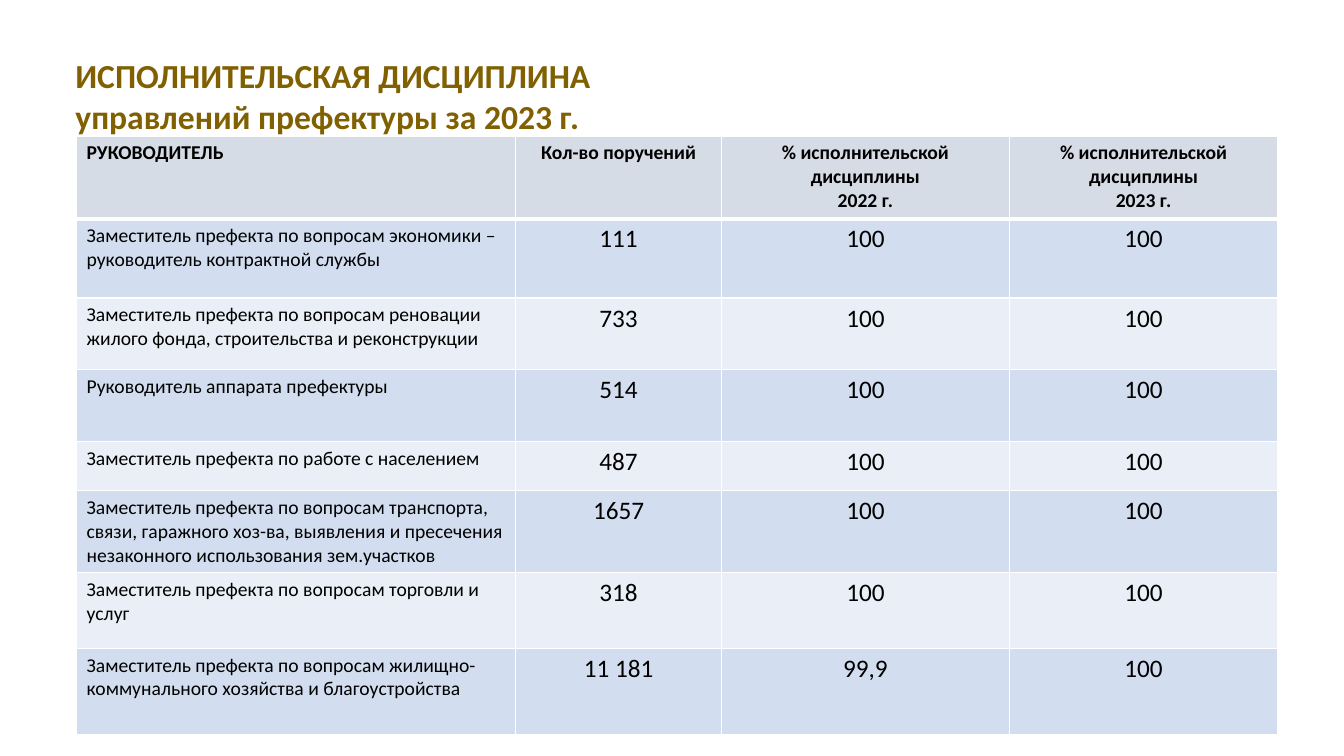
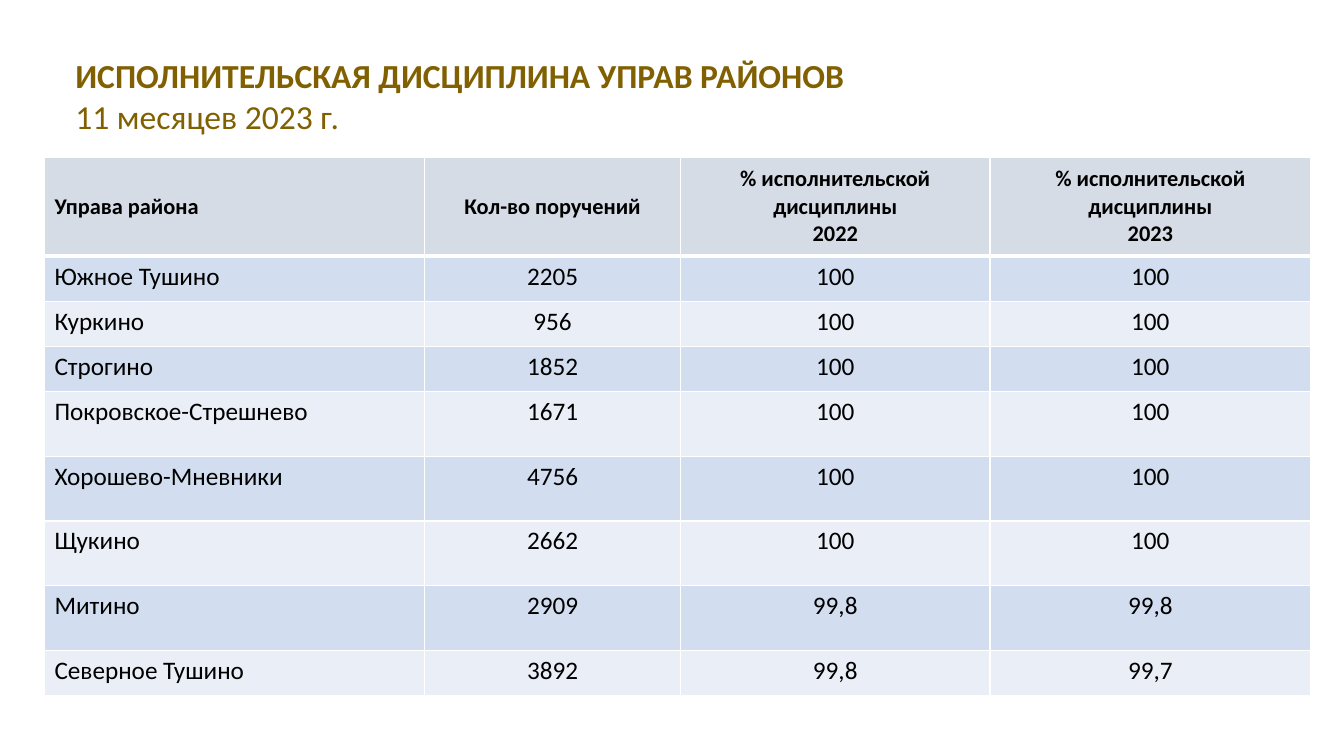
from lxml.etree import SubElement
from pptx import Presentation
from pptx.dml.color import RGBColor
from pptx.enum.text import MSO_ANCHOR, PP_ALIGN
from pptx.oxml.ns import qn
from pptx.util import Cm, Pt

GOLD = RGBColor(0x80, 0x60, 0x00)
BLACK = RGBColor(0x00, 0x00, 0x00)
WHITE = RGBColor(0xFF, 0xFF, 0xFF)
HEADER = RGBColor(0xD6, 0xDC, 0xE5)
BANDS = (RGBColor(0xD2, 0xDE, 0xEF), RGBColor(0xEA, 0xEF, 0xF7))
FONT = "Calibri"


class Deck:
    """Shared style and the current slide."""

    def __init__(self):
        self.prs = Presentation()
        self.prs.slide_width, self.prs.slide_height = Cm(33.87), Cm(19.05)

    def slide(self):
        self.s = self.prs.slides.add_slide(self.prs.slide_layouts[6])

    def run(self, p, text, size, color=BLACK, bold=False):
        r = p.add_run()
        r.text = text
        r.font.name, r.font.size, r.font.bold = FONT, Pt(size), bold
        r.font.color.rgb = color

    def title(self, heading, subtitle, bold_subtitle=False):
        box = self.s.shapes.add_textbox(Cm(1.65), Cm(1.27), Cm(26.29), Cm(2.16))
        tf = box.text_frame
        tf.word_wrap = True
        self.run(tf.paragraphs[0], heading, 24, GOLD, True)
        self.run(tf.add_paragraph(), subtitle, 24, GOLD, bold_subtitle)

    def borders(self, cell, top, bottom):
        tc_pr = cell._tc.get_or_add_tcPr()
        for tag, width in (("lnL", 1), ("lnR", 1), ("lnT", top), ("lnB", bottom)):
            ln = SubElement(tc_pr, qn(f"a:{tag}"), w=str(Pt(width)))
            fill = SubElement(ln, qn("a:solidFill"))
            SubElement(fill, qn("a:srgbClr"), val=str(WHITE))

    def cell(self, cell, text, size, fill, bold, centered):
        for i, line in enumerate(text.split("\n")):
            tf = cell.text_frame
            p = tf.add_paragraph() if i else tf.paragraphs[0]
            p.alignment = PP_ALIGN.CENTER if centered else PP_ALIGN.LEFT
            self.run(p, line, size, bold=bold)
        cell.fill.solid()
        cell.fill.fore_color.rgb = fill

    def table(self, left, top, widths, heights, rows, head_size, name_size,
              head_anchor=MSO_ANCHOR.TOP):
        frame = self.s.shapes.add_table(len(rows), len(widths), Cm(left), Cm(top),
                                        Cm(sum(widths)), Cm(sum(heights)))
        tbl = frame.table
        for col, width in zip(tbl.columns, widths):
            col.width = Cm(width)
        for i, (row, height, values) in enumerate(zip(tbl.rows, heights, rows)):
            row.height = Cm(height)
            head = i == 0
            fill = HEADER if head else BANDS[(i - 1) % 2]
            for j, text in enumerate(values):
                c = tbl.cell(i, j)
                size = head_size if head else 18 if j else name_size
                self.borders(c, 3 if i == 1 else 1, 3 if head else 1)
                self.cell(c, text, size, fill, head, j > 0)
                c.vertical_anchor = head_anchor if head else MSO_ANCHOR.TOP


def main():
    deck = Deck()
    percent = "% исполнительской дисциплины\n"

    # Prefecture departments
    deck.slide()
    deck.title("ИСПОЛНИТЕЛЬСКАЯ ДИСЦИПЛИНА", "управлений префектуры за 2023 г.", True)
    deputy = "Заместитель префекта по "
    departments = [
        ("РУКОВОДИТЕЛЬ", "Кол-во поручений", percent + "2022 г.", percent + "2023 г."),
        (deputy + "вопросам экономики – руководитель контрактной службы",
         "111", "100", "100"),
        (deputy + "вопросам реновации жилого фонда, строительства и реконструкции",
         "733", "100", "100"),
        ("Руководитель аппарата префектуры", "514", "100", "100"),
        (deputy + "работе с населением", "487", "100", "100"),
        (deputy + "вопросам транспорта, связи, гаражного хоз-ва, выявления "
         "и пресечения незаконного использования зем.участков",
         "1657", "100", "100"),
        (deputy + "вопросам торговли и услуг", "318", "100", "100"),
        (deputy + "вопросам жилищно-коммунального хозяйства и благоустройства",
         "11 181", "99,9", "100"),
    ]
    deck.table(1.93, 3.43, (11.07, 5.18, 7.26, 6.76),
               (2.08, 2, 1.81, 1.81, 1.24, 2.06, 1.91, 2.16),
               departments, head_size=14, name_size=14)

    # District administrations
    deck.slide()
    deck.title("ИСПОЛНИТЕЛЬСКАЯ ДИСЦИПЛИНА УПРАВ РАЙОНОВ", "11 месяцев 2023 г.")
    districts = [
        ("Управа района", "Кол-во поручений", percent + "2022", percent + "2023"),
        ("Южное Тушино", "2205", "100", "100"),
        ("Куркино", "956", "100", "100"),
        ("Строгино", "1852", "100", "100"),
        ("Покровское-Стрешнево", "1671", "100", "100"),
        ("Хорошево-Мневники", "4756", "100", "100"),
        ("Щукино", "2662", "100", "100"),
        ("Митино", "2909", "99,8", "99,8"),
        ("Северное Тушино", "3892", "99,8", "99,7"),
    ]
    deck.table(1.12, 3.96, (9.58, 6.45, 7.8, 8.08),
               [2.49] + [1.14] * 3 + [1.63] * 4 + [1.14],
               districts, head_size=16, name_size=18, head_anchor=MSO_ANCHOR.MIDDLE)

    deck.prs.save("out.pptx")


if __name__ == "__main__":
    main()
